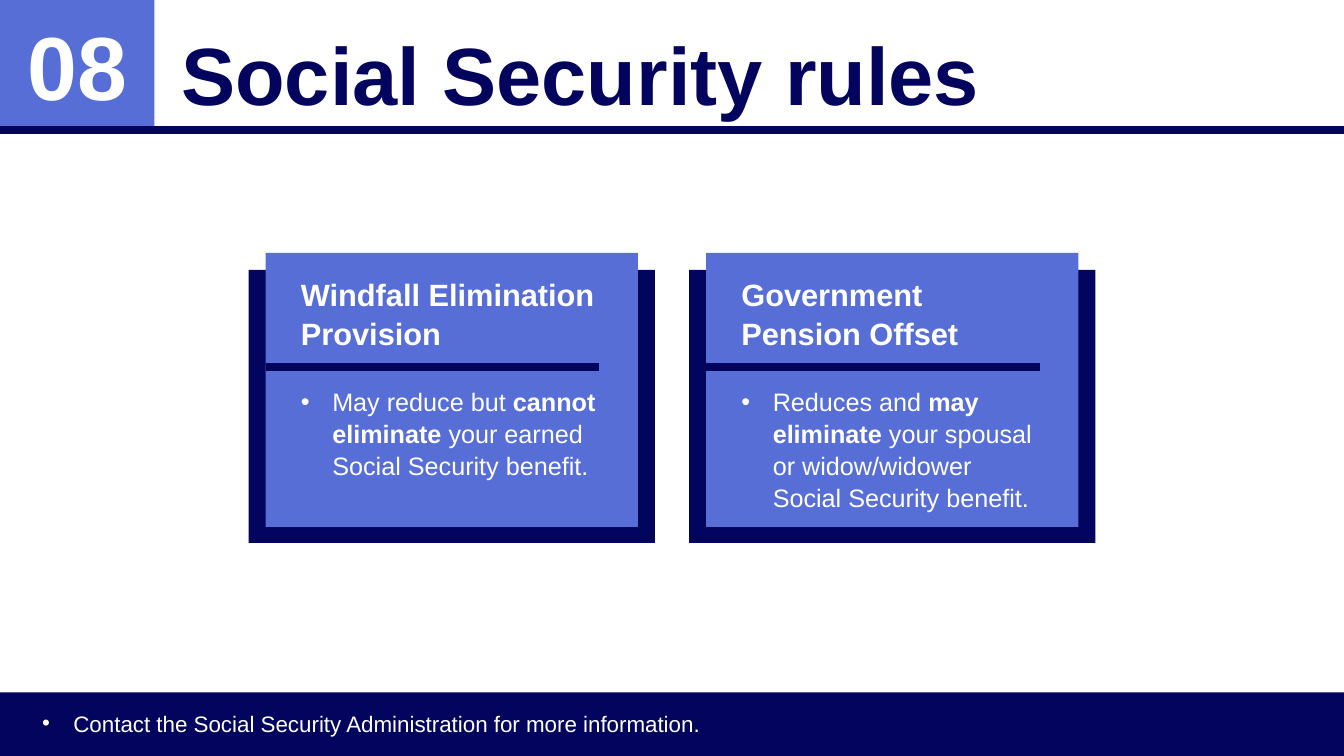
import pptx
import pptx.util
import pptx.dml.color
import pptx.enum.shapes
import pptx.enum.text
import pptx.oxml.ns
from lxml import etree

Cm, Pt = pptx.util.Cm, pptx.util.Pt
RGBColor = pptx.dml.color.RGBColor
PP_ALIGN = pptx.enum.text.PP_ALIGN
MSO_ANCHOR = pptx.enum.text.MSO_ANCHOR

# Content: runs are (text, bold)
NUMBER = "08"
TITLE = "Social Security rules"
CARDS = [
    ("Windfall Elimination Provision",
     [("May reduce but ", False), ("cannot eliminate", True),
      (" your earned Social Security benefit.", False)], 5.31),
    ("Government Pension Offset",
     [("Reduces and ", False), ("may eliminate", True),
      (" your spousal or widow/widower Social Security benefit.", False)], 6.07),
]
FOOTER = "Contact the Social Security Administration for more information."

# Style and layout, lengths in cm
NAVY = RGBColor(0x03, 0x04, 0x5E)
BLUE = RGBColor(0x57, 0x6E, 0xD6)
WHITE = RGBColor(0xFF, 0xFF, 0xFF)
FONT = "Arial"
SLIDE_W, SLIDE_H = 33.87, 19.05
HEADER_H = 3.28
FOOTER_H = 1.6
CARD_W, CARD_H, CARD_PITCH, CARD_TOP = 10.24, 6.88, 11.1, 6.8
INSET = 0.43

prs = pptx.Presentation()
prs.slide_width, prs.slide_height = Cm(SLIDE_W), Cm(SLIDE_H)
s = prs.slides.add_slide(prs.slide_layouts[6])


def add_rect(x, y, w, h, color):
    sp = s.shapes.add_shape(pptx.enum.shapes.MSO_SHAPE.RECTANGLE,
                            Cm(x), Cm(y), Cm(w), Cm(h))
    sp.shadow.inherit = False
    sp.fill.solid()
    sp.fill.fore_color.rgb = color
    sp.line.fill.background()


def add_rule(x, y, length):
    line = s.shapes.add_connector(pptx.enum.shapes.MSO_CONNECTOR.STRAIGHT,
                                  Cm(x), Cm(y), Cm(x + length), Cm(y))
    line.line.color.rgb = NAVY
    line.line.width = Pt(6)
    etree.SubElement(line._element.spPr, pptx.oxml.ns.qn("a:effectLst"))


def add_textbox(x, y, w, h):
    tf = s.shapes.add_textbox(Cm(x), Cm(y), Cm(w), Cm(h)).text_frame
    tf.word_wrap = True
    return tf


def write(p, runs, size, color=WHITE, bullet=False, spacing=1.05):
    if bullet:
        pPr = p._p.get_or_add_pPr()
        pPr.set("marL", str(Cm(0.79)))
        pPr.set("indent", str(-Cm(0.79)))
        etree.SubElement(pPr, pptx.oxml.ns.qn("a:buFont")).set("typeface", FONT)
        etree.SubElement(pPr, pptx.oxml.ns.qn("a:buChar")).set("char", "•")
    p.line_spacing = spacing
    for text, bold in runs:
        r = p.add_run()
        r.text = text
        r.font.name, r.font.size, r.font.bold = FONT, Pt(size), bold
        r.font.color.rgb = color


def center_vertically(tf):
    tf.vertical_anchor = MSO_ANCHOR.MIDDLE
    tf.margin_top = Cm(0.33)


# Header
add_rect(0, 0, 3.89, HEADER_H, BLUE)
tf = add_textbox(0.43, 0.48, 3.05, 2.44)
center_vertically(tf)
write(tf.paragraphs[0], [(NUMBER, True)], 64, spacing=0.9)
tf.paragraphs[0].alignment = PP_ALIGN.CENTER
add_rule(0, HEADER_H, SLIDE_W)
tf = add_textbox(4.32, 0.03, 29.11, HEADER_H)
center_vertically(tf)
write(tf.paragraphs[0], [(TITLE, True)], 58, NAVY)

# Footer
add_rect(0, SLIDE_H - FOOTER_H, SLIDE_W, FOOTER_H, NAVY)
tf = add_textbox(0.81, 17.73, 24.36, 0.94)
write(tf.paragraphs[0], [(FOOTER, False)], 16, bullet=True)

# Cards, centred as a group
first_x = (SLIDE_W - CARD_PITCH * (len(CARDS) - 1) - CARD_W) / 2
for i, (heading, body, text_h) in enumerate(CARDS):
    x = first_x + i * CARD_PITCH
    panel_x, panel_y = x + INSET, CARD_TOP - INSET
    add_rect(x, CARD_TOP, CARD_W, CARD_H, NAVY)
    add_rect(panel_x, panel_y, CARD_W - 2 * INSET, CARD_H + 0.03, BLUE)
    tf = add_textbox(panel_x + 0.64, panel_y + 0.41, 7.98, text_h)
    write(tf.paragraphs[0], [(heading, True)], 22)
    write(tf.add_paragraph(), body, 18, bullet=True)
    for p in tf.paragraphs:
        p.space_after = Pt(24)
    add_rule(panel_x, 9.25, 8.41)

prs.save("out.pptx")
